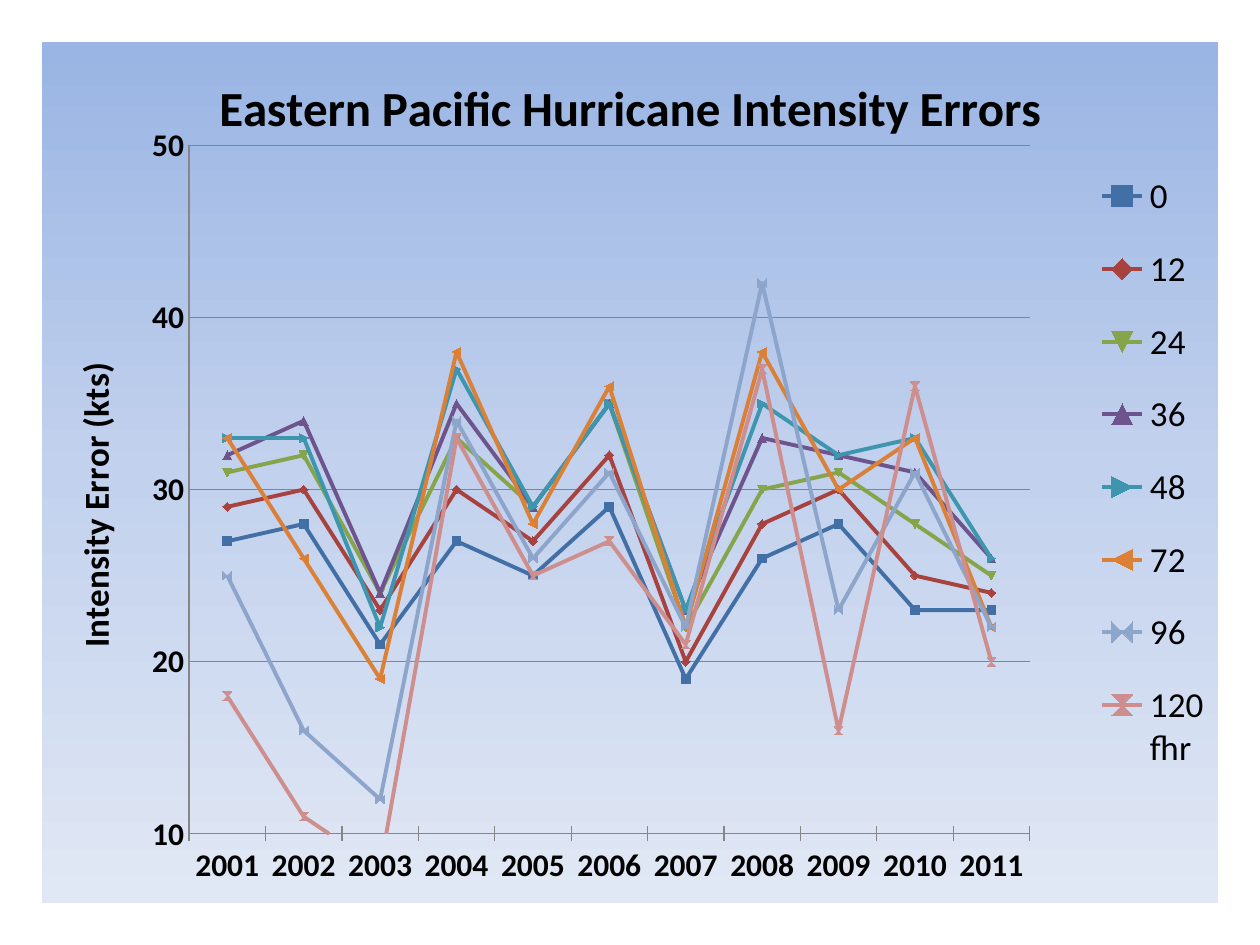
from pptx import Presentation
from pptx.chart.data import CategoryChartData
from pptx.dml.color import RGBColor
from pptx.enum.chart import XL_CHART_TYPE, XL_LEGEND_POSITION, XL_TICK_MARK
from pptx.oxml import parse_xml
from pptx.oxml.ns import nsdecls, qn
from pptx.util import Cm, Pt

FONT = "Calibri"
BLACK = RGBColor(0x00, 0x00, 0x00)
AXIS_GREY = RGBColor(0x86, 0x86, 0x86)
GRID_BLUE = RGBColor(0x70, 0x88, 0xAE)
GRADIENT = [(0, RGBColor(0x9A, 0xB5, 0xE4)), (50, RGBColor(0xC2, 0xD1, 0xED)),
            (100, RGBColor(0xE1, 0xE8, 0xF5))]

YEARS = [str(year) for year in range(2001, 2012)]
ERRORS_BY_FORECAST_HOUR = [
    ("0", RGBColor(0x41, 0x6F, 0xA6), [27, 28, 21, 27, 25, 29, 19, 26, 28, 23, 23]),
    ("12", RGBColor(0xA8, 0x42, 0x3F), [29, 30, 23, 30, 27, 32, 20, 28, 30, 25, 24]),
    ("24", RGBColor(0x86, 0xA4, 0x4A), [31, 32, 24, 33, 29, 35, 22, 30, 31, 28, 25]),
    ("36", RGBColor(0x6E, 0x54, 0x8D), [32, 34, 24, 35, 29, 35, 23, 33, 32, 31, 26]),
    ("48", RGBColor(0x3D, 0x96, 0xAE), [33, 33, 22, 37, 29, 35, 23, 35, 32, 33, 26]),
    ("72", RGBColor(0xDA, 0x81, 0x37), [33, 26, 19, 38, 28, 36, 22, 38, 30, 33, 22]),
    ("96", RGBColor(0x8E, 0xA5, 0xCB), [25, 16, 12, 34, 26, 31, 22, 42, 23, 31, 22]),
    ("120 fhr", RGBColor(0xCE, 0x8E, 0x8D), [18, 11, 8, 33, 25, 27, 21, 37, 16, 36, 20]),
]


def format_font(font, size, bold=False):
    """Apply the chart typeface with the given size and weight."""
    font.name = FONT
    font.size = Pt(size)
    font.bold = bold
    font.color.rgb = BLACK


def write_title(title, text, size):
    """Write a bold chart or axis title."""
    paragraph = title.text_frame.paragraphs[0]
    span = paragraph.add_run()
    span.text = text
    format_font(span.font, size, bold=True)


def set_layout(parent, index, left, top, width, height, inner=False):
    """Place a chart part by fractions of the chart's size."""
    for old in parent.findall(qn("c:layout")):
        parent.remove(old)
    target = '<c:layoutTarget val="inner"/>' if inner else ""
    sizes = zip("xywh", (left, top, width, height))
    places = "".join(f'<c:{key} val="{value}"/>' for key, value in sizes)
    parent.insert(index, parse_xml(
        f'<c:layout {nsdecls("c")}><c:manualLayout>{target}'
        f'<c:xMode val="edge"/><c:yMode val="edge"/>{places}'
        "</c:manualLayout></c:layout>"))


def fill_background(chart):
    """Fill the chart area with a vertical gradient and no outline."""
    stops = "".join(
        f'<a:gs pos="{position * 1000}"><a:srgbClr val="{color}"/></a:gs>'
        for position, color in GRADIENT)
    chart.element.find(qn("c:chart")).addnext(parse_xml(
        f'<c:spPr {nsdecls("c", "a")}><a:gradFill><a:gsLst>{stops}</a:gsLst>'
        '<a:lin ang="5400000" scaled="0"/></a:gradFill>'
        "<a:ln><a:noFill/></a:ln></c:spPr>"))


def format_axes(chart):
    """Set scale, lines, ticks and labels of both axes."""
    for axis in (chart.category_axis, chart.value_axis):
        format_font(axis.tick_labels.font, 18, bold=True)
        axis.format.line.color.rgb = AXIS_GREY
        axis.minor_tick_mark = XL_TICK_MARK.NONE
    chart.category_axis.major_tick_mark = XL_TICK_MARK.CROSS

    values = chart.value_axis
    values.major_tick_mark = XL_TICK_MARK.NONE
    values.minimum_scale, values.maximum_scale, values.major_unit = 10, 50, 10
    values.major_gridlines.format.line.color.rgb = GRID_BLUE
    write_title(values.axis_title, "Intensity Error (kts)", 20)
    body = next(values.axis_title.format.element.iter(qn("a:bodyPr"))) \
        if hasattr(values.axis_title.format, "element") \
        else next(chart.element.find(".//" + qn("c:valAx")).iter(qn("a:bodyPr")))
    body.set("rot", "-5400000")
    body.set("vert", "horz")


def format_series(chart):
    """Color each line together with its markers."""
    for series, (_, color, _) in zip(chart.plots[0].series, ERRORS_BY_FORECAST_HOUR):
        series.smooth = False
        series.format.line.width = Pt(2.25)
        series.format.line.color.rgb = color
        series.marker.size = 5
        series.marker.format.fill.solid()
        series.marker.format.fill.fore_color.rgb = color
        series.marker.format.line.color.rgb = color


def add_error_chart(page, left, top, width, height):
    """Add the line chart of intensity errors in the given box."""
    data = CategoryChartData()
    data.categories = YEARS
    for name, _, errors in ERRORS_BY_FORECAST_HOUR:
        data.add_series(name, errors)
    chart = page.shapes.add_chart(
        XL_CHART_TYPE.LINE_MARKERS, left, top, width, height, data).chart
    format_font(chart.font, 18)
    fill_background(chart)
    write_title(chart.chart_title, "Eastern Pacific Hurricane Intensity Errors", 28)
    format_axes(chart)
    format_series(chart)

    chart.has_legend = True
    chart.legend.position = XL_LEGEND_POSITION.RIGHT
    chart.legend.include_in_layout = False
    format_font(chart.legend.font, 20)
    set_layout(chart.element.find(".//" + qn("c:legend")), 1, 0.89, 0.12, 0.11, 0.76)
    set_layout(chart.element.find(".//" + qn("c:plotArea")), 0,
               0.125, 0.12, 0.715, 0.8, inner=True)


def main():
    """Build the slide and save the deck."""
    deck = Presentation()
    deck.slide_width, deck.slide_height = Cm(25.4), Cm(19.05)
    page = deck.slides.add_slide(deck.slide_layouts[6])
    margin = Cm(0.85)
    add_error_chart(page, margin, margin, deck.slide_width - 2 * margin, Cm(17.35))
    deck.save("out.pptx")


if __name__ == "__main__":
    main()
